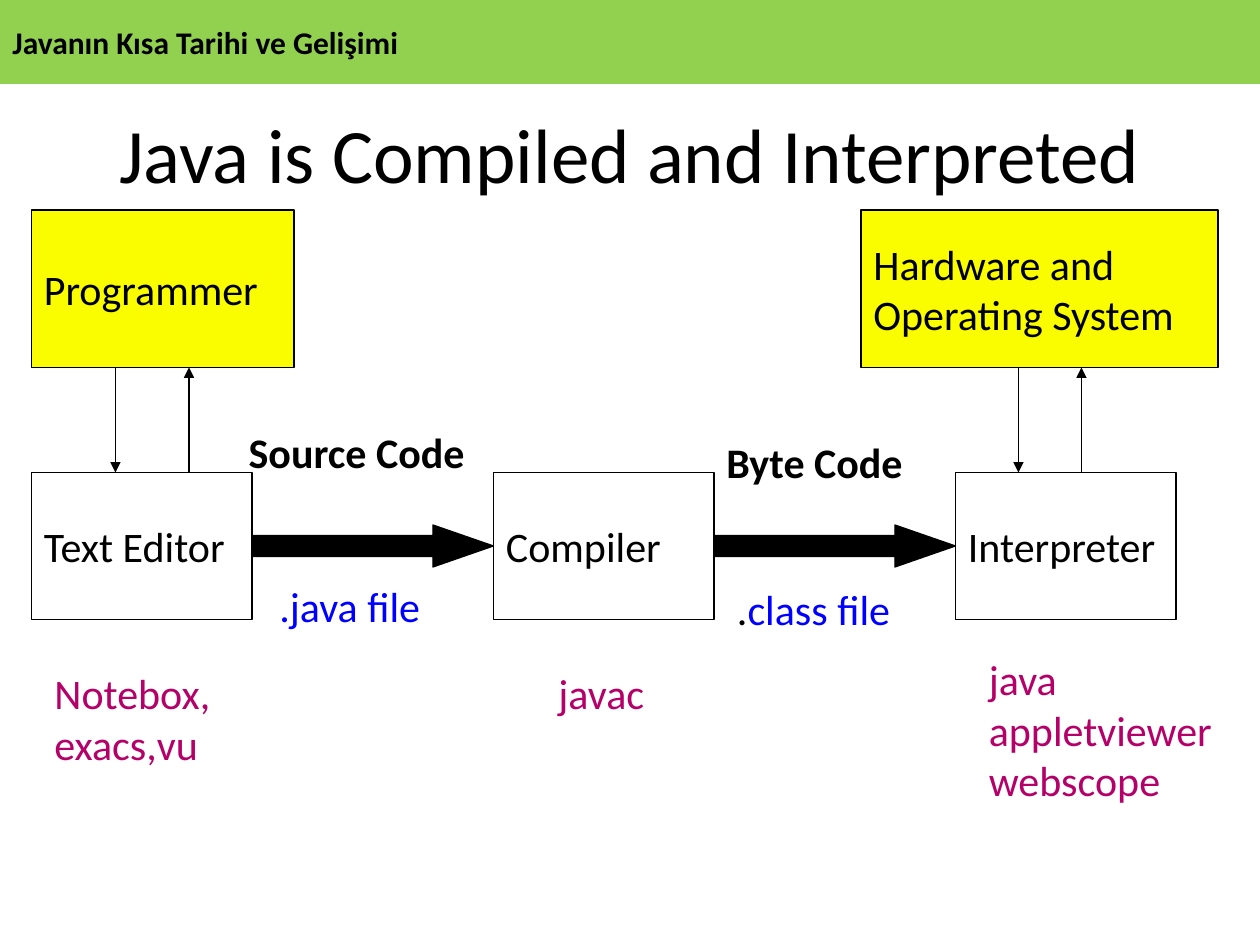
from lxml import etree
from pptx import Presentation
from pptx.dml.color import RGBColor
from pptx.enum.shapes import MSO_CONNECTOR, MSO_SHAPE
from pptx.enum.text import MSO_ANCHOR, PP_ALIGN
from pptx.oxml.ns import qn
from pptx.util import Pt

BLACK = RGBColor(0x00, 0x00, 0x00)
WHITE = RGBColor(0xFF, 0xFF, 0xFF)
YELLOW = RGBColor(0xFA, 0xFD, 0x00)
GREEN = RGBColor(0x92, 0xD0, 0x50)
BLUE = RGBColor(0x00, 0x00, 0xFF)
PLUM = RGBColor(0xB5, 0x00, 0x69)
RECT, ARROW = MSO_SHAPE.RECTANGLE, MSO_SHAPE.RIGHT_ARROW
LINE = MSO_CONNECTOR.STRAIGHT
LEFT, CENTER = PP_ALIGN.LEFT, PP_ALIGN.CENTER
TOP, MIDDLE = MSO_ANCHOR.TOP, MSO_ANCHOR.MIDDLE


class Painter:
    font = "Calibri"
    size = 24
    stroke = 0.75

    def __init__(self, slide):
        self.slide = slide

    def style(self, run, color, size=size, bold=False):
        run.font.name = self.font
        run.font.size = Pt(size)
        run.font.bold = bold
        run.font.color.rgb = color

    def fill_text(self, shape, text, color=BLACK, size=size, bold=False,
                  align=LEFT, anchor=MIDDLE):
        frame = shape.text_frame
        frame.text = text
        frame.word_wrap = True
        frame.vertical_anchor = anchor
        for para in frame.paragraphs:
            para.alignment = align
            for run in para.runs:
                self.style(run, color, size, bold)

    def shape(self, kind, x, y, w, h, fill, edge=True):
        item = self.slide.shapes.add_shape(kind, Pt(x), Pt(y), Pt(w), Pt(h))
        item.shadow.inherit = False
        item.fill.solid()
        item.fill.fore_color.rgb = fill
        if edge:
            item.line.color.rgb = BLACK
            item.line.width = Pt(self.stroke)
        else:
            item.line.fill.background()
        return item

    def box(self, x, y, w, h, text, fill, edge=True, **look):
        self.fill_text(self.shape(RECT, x, y, w, h, fill, edge), text, **look)

    def label(self, x, y, w, h, text, anchor=TOP, **look):
        item = self.slide.shapes.add_textbox(Pt(x), Pt(y), Pt(w), Pt(h))
        self.fill_text(item, text, anchor=anchor, **look)
        return item

    def block(self, x, y, w, h):
        item = self.shape(ARROW, x, y, w, h, BLACK)
        item.adjustments[1] = 1.44

    def arrow(self, x, start, end):
        item = self.slide.shapes.add_connector(
            LINE, Pt(x), Pt(start), Pt(x), Pt(end))
        item.line.color.rgb = BLACK
        item.line.width = Pt(self.stroke)
        props = item._element.spPr
        etree.SubElement(props.find(qn("a:ln")), qn("a:tailEnd"),
                         type="triangle")
        etree.SubElement(props, qn("a:effectLst"))


def main():
    deck = Presentation()
    deck.slide_width, deck.slide_height = Pt(720), Pt(540)
    pen = Painter(deck.slides.add_slide(deck.slide_layouts[6]))

    # Header and title
    pen.box(0, 0, 720, 48, "Javanın Kısa Tarihi ve Gelişimi", GREEN,
            edge=False, size=18, bold=True)
    pen.label(36, 42, 648, 90, "Java is Compiled and Interpreted",
              size=44, align=CENTER, anchor=MIDDLE)

    # Row of tools, joined by block arrows
    left, wide, step = 18, 126, 264
    row, high = 270, 84
    tools = ["Text Editor", "Compiler", "Interpreter"]
    for i, name in enumerate(tools):
        x = left + i * step
        pen.box(x, row, wide, high, name, WHITE)
        if i < len(tools) - 1:
            pen.block(x + wide, 300, step - wide, 24)

    # Upper boxes, each with a down and an up arrow
    top, tall = 120, 90
    for x, w, text, down, up in [
        (18, 150, "Programmer", 66, 108),
        (492, 204, "Hardware and\nOperating System", 582, 618),
    ]:
        pen.box(x, top, w, tall, text, YELLOW)
        pen.arrow(down, top + tall, row)
        pen.arrow(up, row, top + tall)

    # Names of the code and file types
    pen.label(135, 240, 164, 36, "Source Code", bold=True)
    pen.label(408, 246, 138, 36, "Byte Code", bold=True)
    pen.label(152.5, 328, 104, 36, ".java file", color=BLUE)
    note = pen.label(414, 330, 114.5, 36, ".")
    run = note.text_frame.paragraphs[0].add_run()
    run.text = "class file"
    pen.style(run, BLUE)

    # Example programs
    for x, y, w, h, text in [
        (24, 378, 145.5, 65, "Notebox, exacs,vu"),
        (312, 378, 70, 36, "javac"),
        (558, 370, 149, 94, "java\nappletviewer\nwebscope"),
    ]:
        pen.label(x, y, w, h, text, color=PLUM)

    deck.save("out.pptx")


if __name__ == "__main__":
    main()
